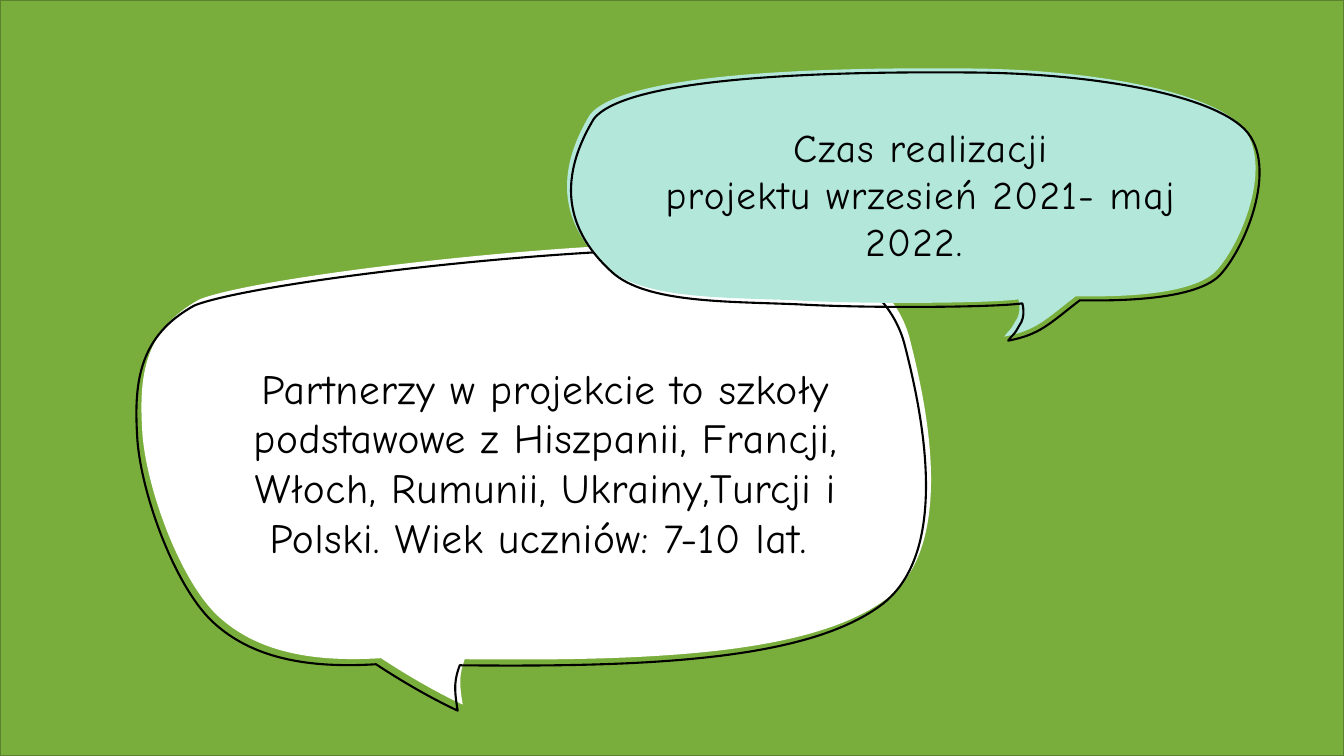
from dataclasses import dataclass

from lxml import etree
from pptx import Presentation
from pptx.dml.color import RGBColor
from pptx.enum.shapes import MSO_SHAPE
from pptx.enum.text import MSO_ANCHOR, MSO_AUTO_SIZE, PP_ALIGN
from pptx.oxml.ns import qn
from pptx.shapes.autoshape import Shape
from pptx.slide import Slide
from pptx.util import Inches, Pt

RECTANGLE = MSO_SHAPE.RECTANGLE
MIDDLE = MSO_ANCHOR.MIDDLE
NO_AUTOFIT = MSO_AUTO_SIZE.NONE
CENTER = PP_ALIGN.CENTER
TITLE_ONLY = 5
UNITS_PER_INCH = 1000
FONT = "Comic Neue"
BLACK = "000000"
HARD_SPACE = chr(160)

Point = tuple[float, float]
Curve = tuple[float, float, float, float, float, float]


@dataclass(frozen=True)
class Box:
    """A place on the slide in inches."""

    left: float
    top: float
    width: float
    height: float


@dataclass(frozen=True)
class Bubble:
    """A speech bubble: its outline curves, fill and the shift of its drawn line."""

    box: Box
    start: Point
    curves: list[Curve]
    fill: str
    line_shift: Point


@dataclass(frozen=True)
class Caption:
    """Text with its box, size and letter spacing in points."""

    text: str
    box: Box
    size: float
    spacing: float


PARTNERS_BUBBLE = Bubble(
    Box(1.4, 2.41, 7.84, 4.58),
    (3.78, 6.53),
    [
        (3.12, 6.57, 2.55, 6.48, 2.15, 6.1),
        (1.76, 5.72, 1.43, 4.77, 1.41, 4.25),
        (1.38, 3.73, 1.43, 3.27, 1.98, 2.97),
        (2.61, 2.72, 6.26, 2.3, 7.77, 2.43),
        (8.47, 2.51, 8.9, 2.9, 9.02, 3.35),
        (9.18, 3.97, 9.51, 5.42, 8.78, 5.95),
        (8.04, 6.49, 6.48, 6.56, 4.61, 6.54),
        (4.56, 6.68, 4.55, 6.76, 4.59, 6.99),
        (4.18, 6.8, 3.78, 6.53, 3.78, 6.53),
    ],
    "FFFFFF",
    (-0.05, 0.06),
)
DATES_BUBBLE = Bubble(
    Box(5.62, 0.68, 6.83, 2.66),
    (10.1, 2.97),
    [
        (9.84, 3.01, 8.57, 3.02, 7.88, 2.98),
        (7.19, 2.95, 6.37, 2.97, 6.03, 2.66),
        (5.69, 2.35, 5.41, 1.87, 5.85, 1.14),
        (6.21, 0.68, 8.57, 0.67, 9.64, 0.68),
        (10.71, 0.69, 11.87, 0.87, 12.27, 1.21),
        (12.67, 1.54, 12.33, 2.4, 12.06, 2.69),
        (11.79, 2.97, 10.85, 2.94, 10.67, 2.94),
        (10.37, 3.17, 10.28, 3.28, 9.96, 3.34),
        (10.02, 3.26, 10.01, 3.3, 10.07, 3.19),
        (10.14, 3.1, 10.1, 2.97, 10.1, 2.97),
    ],
    "B2E7DA",
    (0.04, 0.04),
)
DATES = Caption(
    f"Czas realizacji projektu{HARD_SPACE}wrzesień 2021- maj 2022.{HARD_SPACE}",
    Box(6.43, 1.18, 5.41, 1.49), 28, 1,
)
PARTNERS = Caption(
    "Partnerzy w projekcie to szkoły podstawowe z Hiszpanii, Francji, "
    f"Włoch, Rumunii, Ukrainy,Turcji i Polski. Wiek uczniów: 7-10 lat.{HARD_SPACE}",
    Box(2.21, 3.14, 6.41, 2.89), 29.6, 0.5,
)


def color(value: str) -> RGBColor:
    """Turn a hex string into a colour."""
    return RGBColor.from_string(value)


def style_shape(shape: Shape, fill: str | None, line: str | None, width: float = 1) -> None:
    """Set fill and line of a shape, leaving out whichever is None."""
    shape.shadow.inherit = False
    if fill:
        shape.fill.solid()
        shape.fill.fore_color.rgb = color(fill)
    else:
        shape.fill.background()
    if line:
        shape.line.color.rgb = color(line)
        shape.line.width = Pt(width)
    else:
        shape.line.fill.background()


def add_outline(slide: Slide, bubble: Bubble, shift: Point) -> Shape:
    """Draw the curved outline of a bubble moved by the given shift."""
    box = bubble.box
    left, top = box.left + shift[0], box.top + shift[1]
    builder = slide.shapes.build_freeform(
        round(left * UNITS_PER_INCH), round(top * UNITS_PER_INCH),
        scale=Inches(1) / UNITS_PER_INCH)
    corner = (round((left + box.width) * UNITS_PER_INCH),
              round((top + box.height) * UNITS_PER_INCH))
    builder.add_line_segments([corner], close=False)
    shape = builder.convert_to_shape()
    outline = shape.element.find(f".//{qn('a:path')}")
    for segment in list(outline):
        outline.remove(segment)
    for tag, numbers in [("a:moveTo", bubble.start)] + [
            ("a:cubicBezTo", curve) for curve in bubble.curves]:
        segment = etree.SubElement(outline, qn(tag))
        for x, y in zip(numbers[::2], numbers[1::2]):
            point = etree.SubElement(segment, qn("a:pt"))
            point.set("x", str(round((x - box.left) * UNITS_PER_INCH)))
            point.set("y", str(round((y - box.top) * UNITS_PER_INCH)))
    etree.SubElement(outline, qn("a:close"))
    return shape


def add_bubble(slide: Slide, bubble: Bubble) -> None:
    """Draw a filled bubble and its shifted black line."""
    style_shape(add_outline(slide, bubble, (0, 0)), bubble.fill, None)
    style_shape(add_outline(slide, bubble, bubble.line_shift), None, BLACK, 1.5)


def write_caption(shape: Shape, caption: Caption) -> None:
    """Place a text shape and fill it with its centred caption."""
    box = caption.box
    shape.left, shape.top = Inches(box.left), Inches(box.top)
    shape.width, shape.height = Inches(box.width), Inches(box.height)
    frame = shape.text_frame
    frame.word_wrap = True
    frame.auto_size = NO_AUTOFIT
    frame.vertical_anchor = MIDDLE
    paragraph = frame.paragraphs[0]
    paragraph.alignment = CENTER
    run = paragraph.add_run()
    run.text = caption.text
    run.font.name = FONT
    run.font.size = Pt(caption.size)
    run.font.color.rgb = color(BLACK)
    properties = shape.element.find(f".//{qn('a:rPr')}")
    properties.set("spc", str(round(caption.spacing * 100)))


def main() -> None:
    """Build the slide and save it."""
    presentation = Presentation()
    presentation.slide_width = Inches(13.33)
    presentation.slide_height = Inches(7.5)
    slide = presentation.slides.add_slide(presentation.slide_layouts[TITLE_ONLY])
    backdrop = slide.shapes.add_shape(
        RECTANGLE, 0, 0, presentation.slide_width, presentation.slide_height)
    style_shape(backdrop, "7AAE3C", "5A812C")
    add_bubble(slide, PARTNERS_BUBBLE)
    add_bubble(slide, DATES_BUBBLE)
    title = slide.shapes.title
    backdrop.element.getparent().append(title.element)
    write_caption(title, DATES)
    write_caption(slide.shapes.add_textbox(0, 0, 0, 0), PARTNERS)
    presentation.save("out.pptx")


if __name__ == "__main__":
    main()
